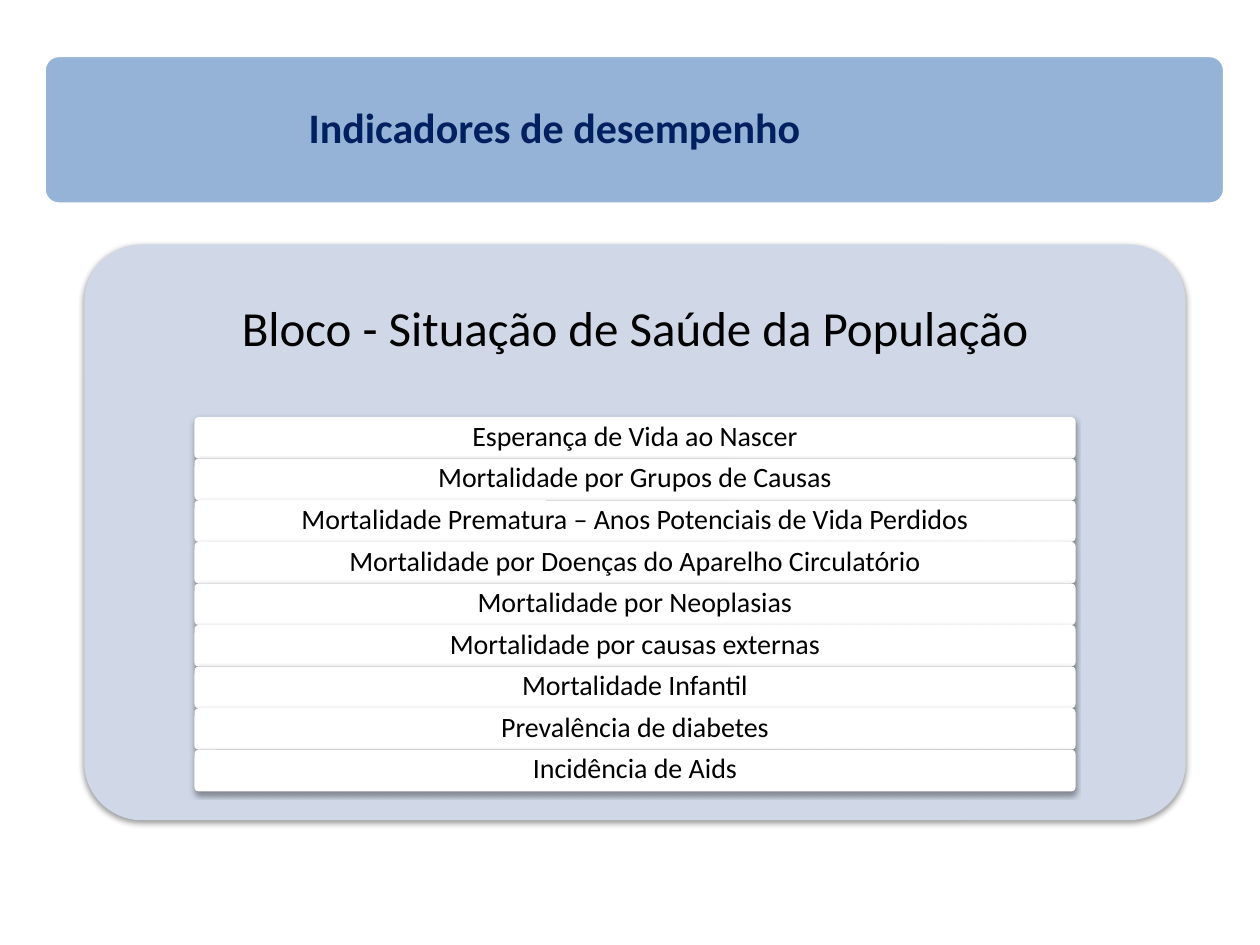
from dataclasses import dataclass

from lxml import etree
from pptx import Presentation
from pptx.dml.color import RGBColor
from pptx.enum.shapes import MSO_SHAPE
from pptx.enum.text import MSO_ANCHOR, MSO_AUTO_SIZE, PP_ALIGN
from pptx.oxml.ns import qn
from pptx.util import Inches, Pt

ROUNDED = MSO_SHAPE.ROUNDED_RECTANGLE
MIDDLE = MSO_ANCHOR.MIDDLE
NO_FIT = MSO_AUTO_SIZE.NONE
LEFT, CENTER = PP_ALIGN.LEFT, PP_ALIGN.CENTER
TITLE_ONLY = 5


@dataclass(frozen=True)
class Theme:
    font: str = "Calibri"
    banner: RGBColor = RGBColor(0x95, 0xB3, 0xD7)
    panel: RGBColor = RGBColor(0xD0, 0xD8, 0xE8)
    white: RGBColor = RGBColor(0xFF, 0xFF, 0xFF)
    title: RGBColor = RGBColor(0x00, 0x20, 0x60)
    text: RGBColor = RGBColor(0x00, 0x00, 0x00)
    title_size: Pt = Pt(24)
    heading_size: Pt = Pt(28)
    row_size: Pt = Pt(16)


THEME = Theme()

TITLE = "Indicadores de desempenho"
HEADING = "Bloco - Situação de Saúde da População"
INDICATORS = [
    "Esperança de Vida ao Nascer",
    "Mortalidade por Grupos de Causas",
    "Mortalidade Prematura – Anos Potenciais de Vida Perdidos",
    "Mortalidade por Doenças do Aparelho Circulatório",
    "Mortalidade por Neoplasias",
    "Mortalidade por causas externas",
    "Mortalidade Infantil",
    "Prevalência de diabetes",
    "Incidência de Aids",
]


def add_soft_shadow(shape):
    effects = shape._element.spPr.find(qn("a:effectLst"))
    shadow = etree.SubElement(
        effects, qn("a:outerShdw"), blurRad=str(Pt(3.1)), dist=str(Pt(1.6)),
        dir=str(90 * 60000), rotWithShape="0")
    color = etree.SubElement(shadow, qn("a:srgbClr"), val="000000")
    etree.SubElement(color, qn("a:alpha"), val="38000")


def add_rounded(page, left, top, width, height, fill):
    shape = page.shapes.add_shape(ROUNDED, left, top, width, height)
    shape.adjustments[0] = 0.1
    shape.shadow.inherit = False
    shape.fill.solid()
    shape.fill.fore_color.rgb = fill
    shape.line.fill.background()
    return shape


def write(shape, text, size, color, margins, align=CENTER, bold=False):
    """Set one middle-anchored line; margins are left/right, top, bottom."""
    frame = shape.text_frame
    frame.word_wrap = True
    frame.auto_size = NO_FIT
    frame.vertical_anchor = MIDDLE
    side, frame.margin_top, frame.margin_bottom = map(Inches, margins)
    frame.margin_left = frame.margin_right = side
    para = frame.paragraphs[0]
    para.text = text
    para.alignment = align
    para.line_spacing = 0.9
    font = para.font
    font.name, font.size, font.bold = THEME.font, size, bold
    font.color.rgb = color


def add_banner(page, left, top, width, height):
    banner = add_rounded(page, left, top, width, height, THEME.banner)
    banner.line.color.rgb = THEME.white
    banner.line.width = Pt(2)

    title = page.shapes.title
    title._element.addprevious(banner._element)  # the title stays in front
    indent = Inches(2)
    title.left, title.top = left + indent, top
    title.width, title.height = width - indent, height
    write(title, TITLE, THEME.title_size, THEME.title, (0.1, 0.1, 0.1),
          align=LEFT, bold=True)


def add_indicator_panel(page, left, top, width, height):
    panel = add_rounded(page, left, top, width, height, THEME.panel)
    add_soft_shadow(panel)

    heading_height = int(height * 0.3)
    heading = page.shapes.add_textbox(left, top, width, heading_height)
    write(heading, HEADING, THEME.heading_size, THEME.text, (0.12, 0.12, 0.12))

    row_width, row_height = int(width * 0.8), Inches(0.33)
    row_left = left + (width - row_width) // 2
    for index, indicator in enumerate(INDICATORS):
        row_top = top + heading_height + index * row_height
        row = add_rounded(page, row_left, row_top, row_width, row_height,
                          THEME.white)
        add_soft_shadow(row)
        write(row, indicator, THEME.row_size, THEME.text, (0.05, 0.03, 0.04))


def main():
    deck = Presentation()
    deck.slide_width, deck.slide_height = Inches(10), Inches(7.5)
    page = deck.slides.add_slide(deck.slide_layouts[TITLE_ONLY])
    add_banner(page, Inches(0.35), Inches(0.44), Inches(9.37), Inches(1.18))
    add_indicator_panel(page, Inches(0.67), Inches(1.94), Inches(8.74),
                        Inches(4.57))
    deck.save("out.pptx")


if __name__ == "__main__":
    main()
